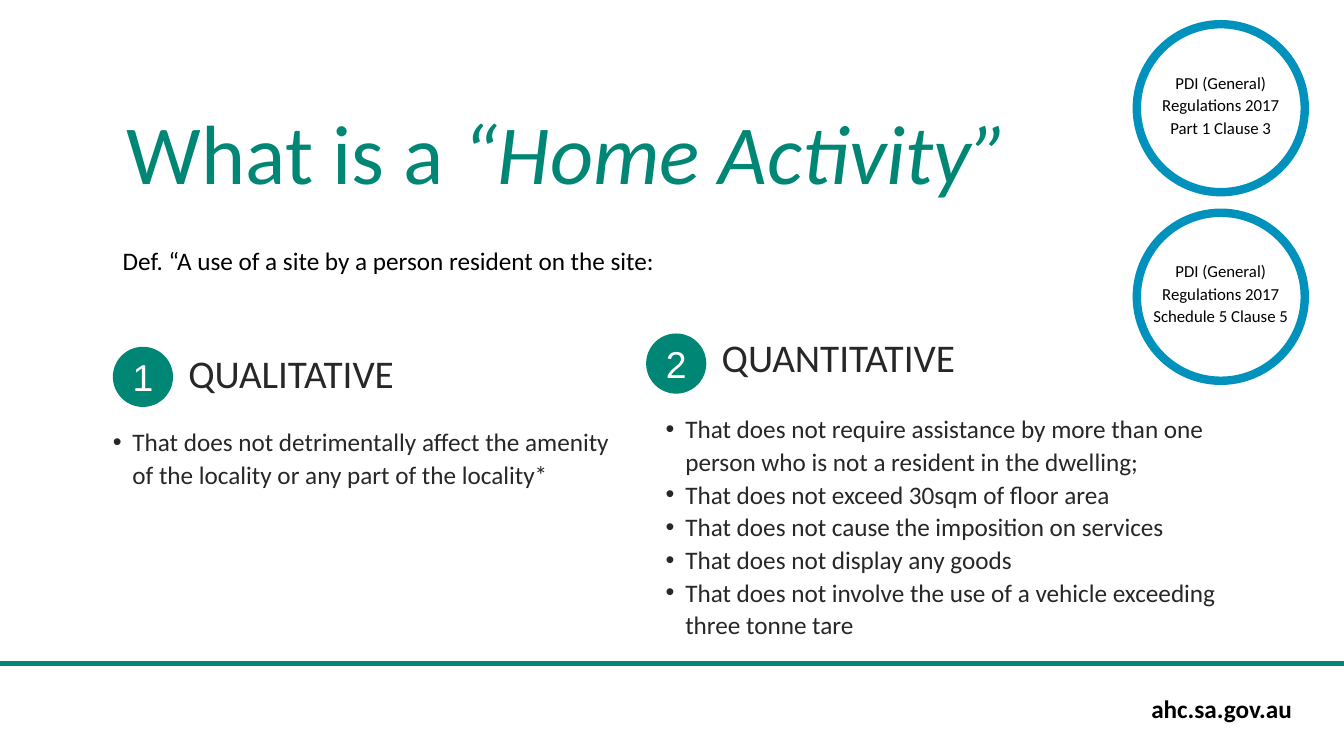
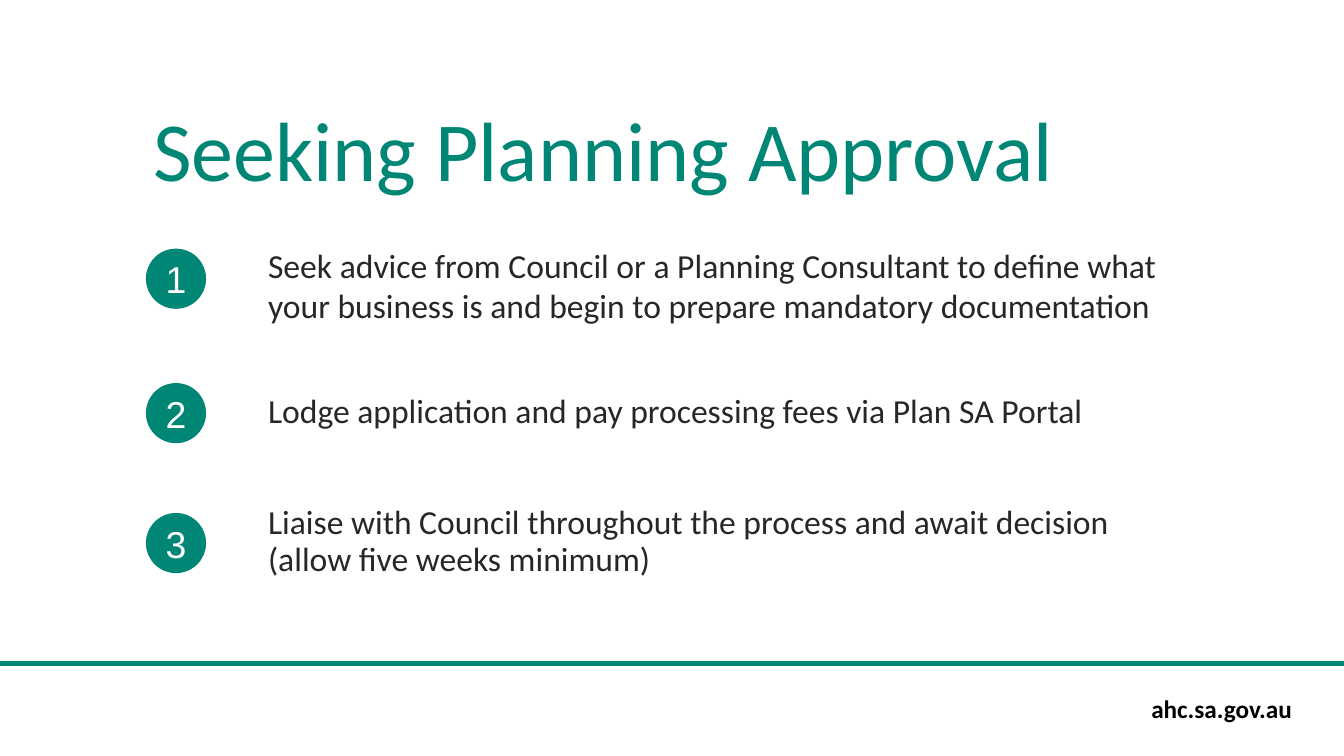
from lxml.etree import SubElement
from pptx import Presentation
from pptx.dml.color import RGBColor
from pptx.enum.shapes import MSO_CONNECTOR, MSO_SHAPE
from pptx.enum.text import MSO_ANCHOR, MSO_AUTO_SIZE, PP_ALIGN
from pptx.oxml.ns import qn
from pptx.util import Pt

GREEN = RGBColor(0x00, 0x86, 0x75)
BLUE = RGBColor(0x00, 0x92, 0xBC)
INK = RGBColor(0x27, 0x27, 0x27)
BLACK = RGBColor(0x00, 0x00, 0x00)
WHITE = RGBColor(0xFF, 0xFF, 0xFF)
WIDTH, HEIGHT = 960, 540
BADGE = 43
HANG = 14


def fill_text(shape, paragraphs, size, color, spacing=None, align=PP_ALIGN.LEFT,
              anchor=MSO_ANCHOR.TOP, inset=0, face="Calibri", bold=False, wrap=True):
    """Write paragraphs, each a list of (text, italic) runs, in one style."""
    frame = shape.text_frame
    frame.auto_size = MSO_AUTO_SIZE.NONE
    frame.word_wrap = wrap
    frame.vertical_anchor = anchor
    frame.margin_left = frame.margin_right = Pt(2 * inset)
    frame.margin_top = frame.margin_bottom = Pt(inset)
    for index, runs in enumerate(paragraphs):
        paragraph = frame.add_paragraph() if index else frame.paragraphs[0]
        paragraph.alignment = align
        paragraph.space_before = Pt(0)
        if spacing:
            paragraph.line_spacing = Pt(spacing)
        for text, italic in runs:
            run = paragraph.add_run()
            run.text = text
            run.font.name, run.font.size = face, Pt(size)
            run.font.bold, run.font.italic = bold, italic
            run.font.color.rgb = color


def add_badge(slide, number, left, top):
    badge = slide.shapes.add_shape(MSO_SHAPE.OVAL, Pt(left), Pt(top), Pt(BADGE), Pt(BADGE))
    badge.shadow.inherit = False
    badge.fill.solid()
    badge.fill.fore_color.rgb = GREEN
    badge.line.fill.background()
    fill_text(badge, [[(str(number), False)]], 26.7, WHITE, align=PP_ALIGN.CENTER,
              anchor=MSO_ANCHOR.MIDDLE, face="Arial")


prs = Presentation()
prs.slide_width, prs.slide_height = Pt(WIDTH), Pt(HEIGHT)
definition_slide = prs.slides.add_slide(prs.slide_layouts[3])
approval_slide = prs.slides.add_slide(prs.slide_layouts[5])

# Title, rule and web address on every slide
titles = [
    (definition_slide, [("What is a ", False), ("“Home Activity”", True)], 83.5, 68.4),
    (approval_slide, [("Seeking Planning Approval", False)], 102.2, 66.2),
]
for slide, title_runs, left, top in titles:
    title = slide.shapes.title
    title.left, title.top, title.width, title.height = Pt(left), Pt(top), Pt(770), Pt(80)
    fill_text(title, [title_runs], 60, GREEN, inset=3.6)

    rule = slide.shapes.add_connector(MSO_CONNECTOR.STRAIGHT, 0, Pt(474), Pt(WIDTH), Pt(474))
    rule.line.color.rgb = GREEN
    rule.line.width = Pt(3)
    SubElement(rule._element.spPr, qn("a:effectLst"))

    address = slide.shapes.add_textbox(Pt(738), Pt(491.8), Pt(192), Pt(30))
    fill_text(address, [[("ahc.sa.gov.au", False)]], 18, BLACK,
              align=PP_ALIGN.RIGHT, inset=3.6, bold=True)

# Slide 1: definition, its two kinds of test and the clauses it comes from
definition = definition_slide.shapes.add_textbox(Pt(80.6), Pt(172), Pt(594), Pt(29))
fill_text(definition, [[("Def. “A use of a site by a person resident on the site:", False)]],
          18, BLACK, inset=3.6)

# number, heading, badge left and top, heading top and spacing, list left, top, width, height, items
tests = [
    (1, "QUALITATIVE", 80.6, 247.7, 257.8, 25.6, 80.6, 303.1, 370, 47, [
        "That does not detrimentally affect the amenity of the locality or any part of the locality*",
    ]),
    (2, "QUANTITATIVE", 461.5, 238.2, 247, 24.9, 475.5, 293.8, 412, 164, [
        "That does not require assistance by more than one person who is not a resident "
        "in the dwelling;",
        "That does not exceed 30sqm of floor area",
        "That does not cause the imposition on services",
        "That does not display any goods",
        "That does not involve the use of a vehicle exceeding three tonne tare",
    ]),
]
for (number, name, badge_left, badge_top, name_top, name_spacing,
     left, top, width, height, items) in tests:
    add_badge(definition_slide, number, badge_left, badge_top)
    heading = definition_slide.shapes.add_textbox(
        Pt(badge_left + 54), Pt(name_top), Pt(170), Pt(26))
    fill_text(heading, [[(name, False)]], 28, INK, spacing=name_spacing)

    criteria = definition_slide.placeholders[number]
    criteria.left, criteria.top = Pt(left), Pt(top)
    criteria.width, criteria.height = Pt(width), Pt(height)
    fill_text(criteria, [[(item, False)] for item in items], 18, INK, spacing=23.3)
    for paragraph in criteria.text_frame.paragraphs:
        properties = paragraph._p.get_or_add_pPr()
        properties.set("marL", str(Pt(HANG)))
        properties.set("indent", str(-Pt(HANG)))

for index, clause in enumerate(["Part 1 Clause 3", "Schedule 5 Clause 5"]):
    ring = definition_slide.shapes.add_shape(
        MSO_SHAPE.OVAL, Pt(812), Pt(17.3 + 134.7 * index), Pt(120), Pt(120))
    ring.shadow.inherit = False
    ring.fill.background()
    ring.line.color.rgb = BLUE
    ring.line.width = Pt(6)
    lines = ["PDI (General)", "Regulations 2017", clause]
    fill_text(ring, [[(line, False)] for line in lines], 12, BLACK, spacing=16,
              align=PP_ALIGN.CENTER, anchor=MSO_ANCHOR.MIDDLE, wrap=False)
    ring.text_frame.margin_bottom = Pt(6)

# Slide 2: steps with badge top, text top and line spacing
steps = [
    ("Seek advice from Council or a Planning Consultant to define what your business is "
     "and begin to prepare mandatory documentation", 177.6, 175, None),
    ("Lodge application and pay processing fees via Plan SA Portal", 273.6, 281.5, 26.1),
    ("Liaise with Council throughout the process and await decision "
     "(allow five weeks minimum)", 366.4, 360.7, 26.1),
]
for number, (step, badge_top, step_top, spacing) in enumerate(steps, start=1):
    add_badge(approval_slide, number, 104.2, badge_top)
    instruction = approval_slide.shapes.add_textbox(Pt(191.5), Pt(step_top), Pt(656), Pt(58))
    fill_text(instruction, [[(step, False)]], 24, INK, spacing=spacing)

prs.save("out.pptx")
